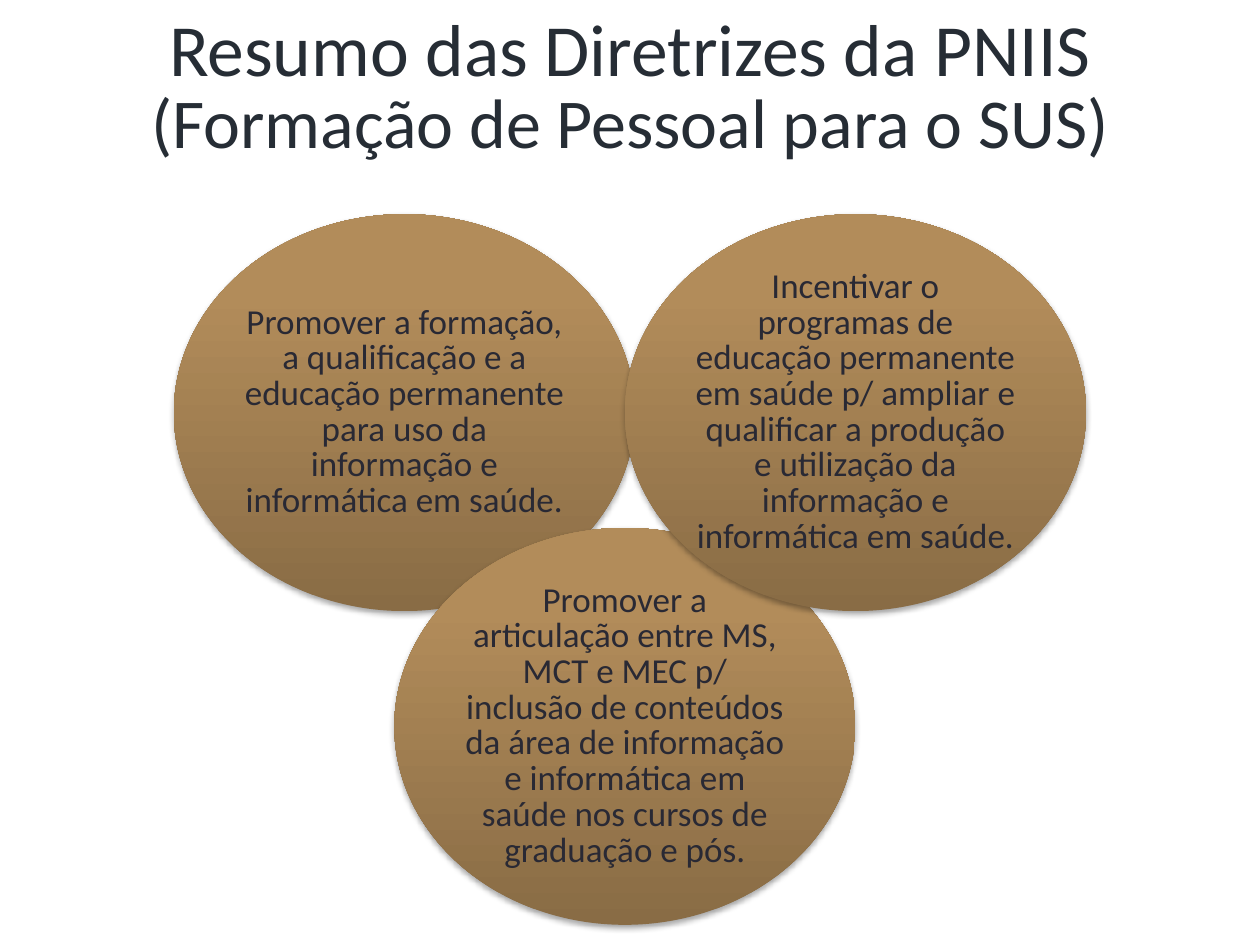
from dataclasses import dataclass
import copy

import lxml.etree
import pptx
import pptx.dml.color
import pptx.enum.shapes
import pptx.enum.text
import pptx.oxml
import pptx.oxml.ns
import pptx.util

COLUMNS, ROWS = 100, 75
FONT = "Calibri"
TITLE_COLOUR, BODY_COLOUR = "262D35", "292934"
GRADIENT = [(0, "896C45"), (0.8, "B28C5A"), (1, "B48D58")]
CIRCLE_WIDTH, CIRCLE_HEIGHT = 36.6, 31.5
UPPER_ROW, LOWER_ROW = 17, 41.9


@dataclass
class Guideline:
    column: float
    row: float
    text: str


GUIDELINES = [
    Guideline(13.8, UPPER_ROW,
              "Promover a formação, a qualificação e a educação permanente "
              "para uso da informação e informática em saúde."),
    Guideline(31.3, LOWER_ROW,
              "Promover a articulação entre MS, MCT e MEC p/ inclusão de conteúdos "
              "da área de informação e informática em saúde nos cursos de graduação e pós."),
    Guideline(49.6, UPPER_ROW,
              "Incentivar o programas de educação permanente em saúde p/ ampliar e "
              "qualificar a produção e utilização da informação e informática em saúde."),
]

deck = pptx.Presentation()
deck.slide_width, deck.slide_height = pptx.util.Inches(10), pptx.util.Inches(7.5)
slide = deck.slides.add_slide(deck.slide_layouts[6])


def colour(hex_value: str) -> pptx.dml.color.RGBColor:
    return pptx.dml.color.RGBColor.from_string(hex_value)


def place(column: float, row: float, width: float, height: float) -> list[int]:
    """Turn grid columns and rows into slide lengths."""
    across, down = deck.slide_width / COLUMNS, deck.slide_height / ROWS
    return [round(column * across), round(row * down),
            round(width * across), round(height * down)]


def set_text(shape, lines: list[tuple[str, float]], hex_value: str, **frame_format) -> None:
    """Write one centred paragraph of (text, size) lines."""
    frame = shape.text_frame
    frame_format |= {"word_wrap": True,
                     "vertical_anchor": pptx.enum.text.MSO_ANCHOR.MIDDLE}
    for name, value in frame_format.items():
        setattr(frame, name, value)
    paragraph = frame.paragraphs[0]
    paragraph.alignment = pptx.enum.text.PP_ALIGN.CENTER
    paragraph.line_spacing = 0.85
    for index, (text, size) in enumerate(lines):
        if index:
            paragraph.add_line_break()
        run = paragraph.add_run()
        run.text = text
        for name, value in {"name": FONT, "size": pptx.util.Pt(size)}.items():
            setattr(run.font, name, value)
        run.font.color.rgb = colour(hex_value)


def fill_gradient(shape) -> None:
    """Shade from dark at the bottom to light at the top."""
    shape.fill.gradient()
    shape.fill.gradient_angle = 90
    stop_list = shape.element.spPr.find(".//" + pptx.oxml.ns.qn("a:gsLst"))
    stop_list.append(copy.deepcopy(stop_list[0]))
    for stop, (position, hex_value) in zip(shape.fill.gradient_stops, GRADIENT):
        stop.position = position
        stop.color.rgb = colour(hex_value)


def add_shadow(shape) -> None:
    """Put a soft shadow just below the shape."""
    shape.shadow.inherit = False
    effects = shape.element.spPr.find(pptx.oxml.ns.qn("a:effectLst"))
    shadow = lxml.etree.SubElement(
        effects, pptx.oxml.ns.qn("a:outerShdw"), blurRad=str(pptx.util.Pt(3.1)),
        dist=str(pptx.util.Pt(1.8)), dir="5400000", rotWithShape="0")
    tint = lxml.etree.SubElement(shadow, pptx.oxml.ns.qn("a:srgbClr"), val="000000")
    lxml.etree.SubElement(tint, pptx.oxml.ns.qn("a:alpha"), val="35000")


def add_guideline(guideline: Guideline) -> None:
    circle = slide.shapes.add_shape(
        pptx.enum.shapes.MSO_SHAPE.OVAL,
        *place(guideline.column, guideline.row, CIRCLE_WIDTH, CIRCLE_HEIGHT))
    fill_gradient(circle)
    circle.line.fill.background()
    add_shadow(circle)
    inset = pptx.util.Inches(0.01)
    set_text(circle, [(guideline.text, 20)], BODY_COLOUR, margin_left=inset,
             margin_right=inset, margin_top=0, margin_bottom=0)


# Title
title = slide.shapes.add_textbox(*place(0, 0, COLUMNS, 14.3))
set_text(title, [("Resumo das Diretrizes da PNIIS", 42),
                 ("(Formação de Pessoal para o SUS)", 40)], TITLE_COLOUR)

# Overlapping circles, back to front
for guideline in GUIDELINES:
    add_guideline(guideline)

deck.save("out.pptx")
